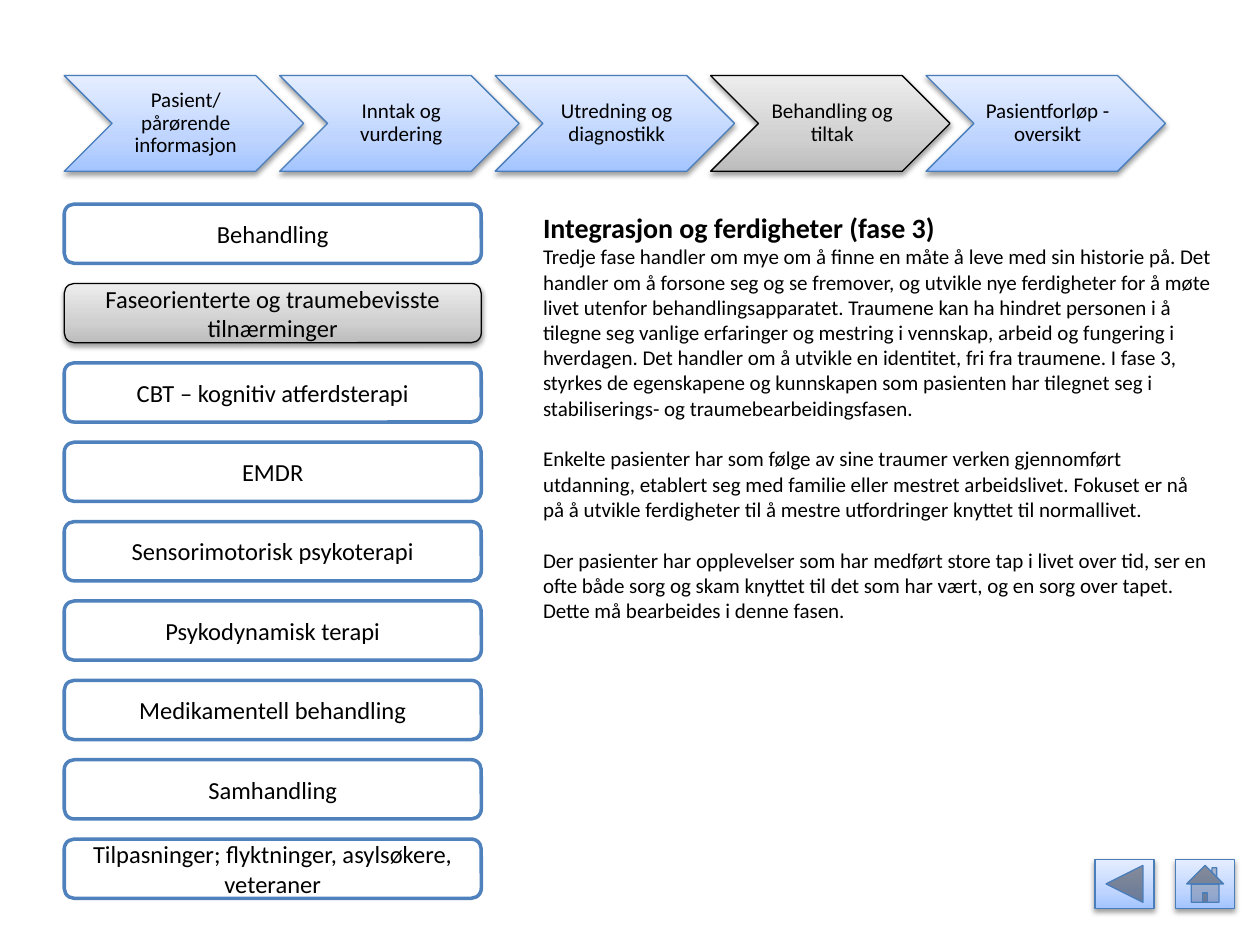
from copy import deepcopy
from dataclasses import dataclass

from lxml import etree
from pptx import Presentation
from pptx.dml.color import RGBColor
from pptx.enum.shapes import MSO_SHAPE
from pptx.enum.text import MSO_ANCHOR, MSO_AUTO_SIZE, PP_ALIGN
from pptx.oxml.ns import qn
from pptx.util import Inches, Pt

CHEVRON = MSO_SHAPE.CHEVRON
ROUND = MSO_SHAPE.ROUNDED_RECTANGLE
BACK = MSO_SHAPE.ACTION_BUTTON_BACK_OR_PREVIOUS
HOME = MSO_SHAPE.ACTION_BUTTON_HOME
LEFT, CENTER = PP_ALIGN.LEFT, PP_ALIGN.CENTER
TOP, MIDDLE = MSO_ANCHOR.TOP, MSO_ANCHOR.MIDDLE


@dataclass
class Theme:
    font: str = "Calibri"
    ink: str = "000000"
    paper: str = "FFFFFF"
    edge: str = "4F81BD"
    rim: str = "4A7EBB"
    blue: tuple = ("A3C4FF", "BFD5FF", "E5EEFF")
    gray: tuple = ("BCBCBC", "D0D0D0", "EDEDED")
    head: int = 16
    menu: int = 14
    text: int = 12


theme = Theme()


def write(frame, text, size=theme.text, bold=False, align=CENTER, gap=0, lead=1.0):
    """Fill the empty first paragraph, or add one, and return it."""
    para = frame.paragraphs[0]
    if para.runs:
        para = frame.add_paragraph()
    para.alignment = align
    para.space_before = Pt(gap)
    para.line_spacing = lead
    run = para.add_run()
    run.text = text
    run.font.name = theme.font
    run.font.size = Pt(size)
    run.font.bold = bold
    run.font.color.rgb = RGBColor.from_string(theme.ink)
    return para


def raise_up(shape, shades, rim):
    """Give a shape a three-stop gradient, a thin line and a soft shadow."""
    fill = shape.fill
    fill.gradient()
    fill.gradient_angle = 90
    props = shape._element.spPr
    stops = props.find(".//" + qn("a:gsLst"))
    stops.append(deepcopy(stops[-1]))
    for stop, shade, place in zip(fill.gradient_stops, shades, (0, 0.35, 1)):
        stop.color.rgb = RGBColor.from_string(shade)
        stop.position = place
    shape.line.color.rgb = RGBColor.from_string(rim)
    shape.line.width = Pt(0.75)
    shape.shadow.inherit = False
    cast = etree.SubElement(
        props.find(qn("a:effectLst")), qn("a:outerShdw"),
        blurRad=str(Pt(3.1)), dist=str(Pt(1.6)), dir="5400000", rotWithShape="0")
    tone = etree.SubElement(cast, qn("a:srgbClr"), val=theme.ink)
    etree.SubElement(tone, qn("a:alpha"), val="38000")


deck = Presentation()
deck.slide_width, deck.slide_height = Inches(10), Inches(7.5)
slide = deck.slides.add_slide(deck.slide_layouts[1])
shapes = slide.shapes
title, body = slide.placeholders
title._element.getparent().remove(title._element)

# Article on the right
body.left, body.top = Inches(4.21), Inches(1.62)
body.width, body.height = Inches(5.51), Inches(5.88)
frame = body.text_frame
frame.word_wrap = True
frame.auto_size = MSO_AUTO_SIZE.NONE
frame.vertical_anchor = TOP
article = [
    ("Integrasjon og ferdigheter (fase 3)", theme.head, True, 0),
    ("Tredje fase handler om mye om å finne en måte å leve med sin historie på. "
     "Det handler om å forsone seg og se fremover, og utvikle nye ferdigheter "
     "for å møte livet utenfor behandlingsapparatet. Traumene kan ha hindret "
     "personen i å tilegne seg vanlige erfaringer og mestring i vennskap, arbeid "
     "og fungering i hverdagen. Det handler om å utvikle en identitet, fri fra "
     "traumene. I fase 3, styrkes de egenskapene og kunnskapen som pasienten har "
     "tilegnet seg i stabiliserings- og traumebearbeidingsfasen.",
     theme.text, False, 0),
    ("Enkelte pasienter har som følge av sine traumer verken gjennomført "
     "utdanning, etablert seg med familie eller mestret arbeidslivet. Fokuset er "
     "nå på å utvikle ferdigheter til å mestre utfordringer knyttet til "
     "normallivet.", theme.text, False, 14.6),
    ("Der pasienter har opplevelser som har medført store tap i livet over tid, "
     "ser en ofte både sorg og skam knyttet til det som har vært, og en sorg "
     "over tapet. Dette må bearbeides i denne fasen.", theme.text, False, 14.6),
]
for text, size, bold, gap in article:
    para = write(frame, text, size=size, bold=bold, align=LEFT, gap=gap)
    props = para._p.get_or_add_pPr()
    props.set("marL", "0")
    props.set("indent", "0")
    etree.SubElement(props, qn("a:buNone"))

# Steps along the top
steps = ["Pasient/ pårørende informasjon", "Inntak og vurdering",
         "Utredning og diagnostikk", "Behandling og tiltak",
         "Pasientforløp - oversikt"]
for i, text in enumerate(steps):
    step = shapes.add_shape(CHEVRON, Inches(0.51 + 1.71 * i), Inches(0.6),
                            Inches(1.9), Inches(0.76))
    if text == "Behandling og tiltak":
        raise_up(step, theme.gray, theme.ink)
    else:
        raise_up(step, theme.blue, theme.rim)
    frame = step.text_frame
    frame.word_wrap = True
    frame.vertical_anchor = MIDDLE
    frame.margin_left = Inches(0.05)
    frame.margin_right = frame.margin_top = frame.margin_bottom = Inches(0.02)
    write(frame, text, lead=0.9)

# Menu on the left
menu = ["Behandling", "Faseorienterte og traumebevisste tilnærminger",
        "CBT – kognitiv atferdsterapi", "EMDR", "Sensorimotorisk psykoterapi",
        "Psykodynamisk terapi", "Medikamentell behandling", "Samhandling",
        "Tilpasninger; flyktninger, asylsøkere, veteraner"]
for i, text in enumerate(menu):
    item = shapes.add_shape(ROUND, Inches(0.51), Inches(1.62 + 0.63 * i),
                            Inches(3.31), Inches(0.47))
    if text.startswith("Faseorienterte"):
        raise_up(item, theme.gray, theme.ink)
    else:
        item.fill.solid()
        item.fill.fore_color.rgb = RGBColor.from_string(theme.paper)
        item.line.color.rgb = RGBColor.from_string(theme.edge)
        item.line.width = Pt(2)
        item.shadow.inherit = False
    frame = item.text_frame
    frame.word_wrap = True
    frame.vertical_anchor = MIDDLE
    write(frame, text, size=theme.menu)

# Page buttons
for kind, left in ((BACK, 8.69), (HOME, 9.33)):
    button = shapes.add_shape(kind, Inches(left), Inches(6.82),
                              Inches(0.47), Inches(0.39))
    raise_up(button, theme.blue, theme.rim)

deck.save("out.pptx")
